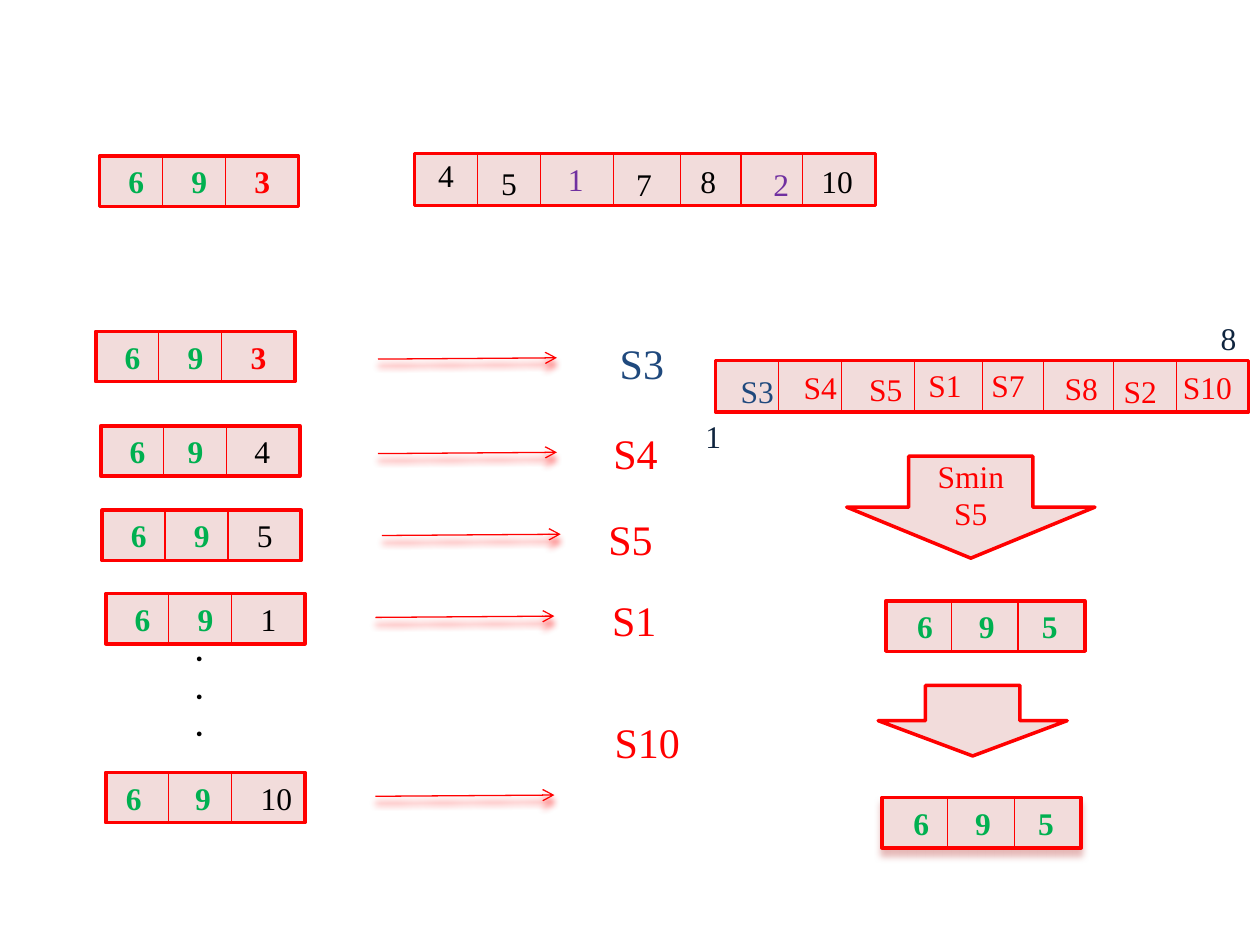
from dataclasses import dataclass
from lxml.etree import SubElement
from pptx import Presentation
from pptx.dml.color import RGBColor as Color
from pptx.enum.shapes import MSO_CONNECTOR as Connector, MSO_SHAPE as Preset
from pptx.enum.text import MSO_ANCHOR as Anchor, MSO_AUTO_SIZE as AutoSize, PP_ALIGN as Align
from pptx.oxml.ns import qn
from pptx.util import Inches, Pt


@dataclass(frozen=True)
class Theme:
    font: str = "Times New Roman"
    dot_font: str = "Calibri"
    red: str = "FF0000"
    pink: str = "F2DCDB"
    rose: str = "E6B9B8"
    green: str = "00B050"
    purple: str = "7030A0"
    blue: str = "1F497D"
    navy: str = "0F243E"
    black: str = "000000"
    text: int = 18
    score: int = 24
    border: float = 2
    rule: float = 0.75


THEME = Theme()
CELL = Inches(10) // 100
DIGIT_WIDTH, LETTER_WIDTH = 0.5, 0.56
TRIPLE_SIZE = (15.8, 4)
TRIPLE_RULES = (5, 10)
RESULT_RULES = (5.2, 10.5)
TRIPLE_LABELS = (1.3, 6.3, 11.3)
RESULT_LABELS = (1.5, 6.4, 11.4)


def grid(*cells):
    return [round(cell * CELL) for cell in cells]


def apply_format(target, values):
    for name, value in values.items():
        setattr(target, name, value)


def set_shadow(shape, color=None):
    effects = SubElement(shape.element.spPr, qn("a:effectLst"))
    if color:
        shadow = SubElement(effects, qn("a:outerShdw"), blurRad=str(Pt(4)), dist=str(Pt(4)),
                            dir="5400000", rotWithShape="0")
        SubElement(shadow, qn("a:srgbClr"), val=color)


def set_line(shape, width):
    shape.line.color.rgb = Color.from_string(THEME.red)
    shape.line.width = Pt(width)


def write(frame, lines, color, size=THEME.text, bold=False, font=THEME.font, align=Align.LEFT):
    for index, line in enumerate(lines):
        paragraph = frame.paragraphs[0] if index == 0 else frame.add_paragraph()
        paragraph.alignment = align
        run = paragraph.add_run()
        run.text = line
        apply_format(run.font, {"name": font, "size": Pt(size), "bold": bold})
        run.font.color.rgb = Color.from_string(color)


def add_label(slide, left, top, lines, color, size=THEME.text, **style):
    ems = max(sum(DIGIT_WIDTH if mark.isdigit() else LETTER_WIDTH for mark in line) for line in lines)
    width = 2 + ems * size / 7.2
    height = 1 + len(lines) * size / 6
    frame = slide.shapes.add_textbox(*grid(left, top, width, height)).text_frame
    apply_format(frame, {"word_wrap": False, "auto_size": AutoSize.SHAPE_TO_FIT_TEXT})
    write(frame, lines, color, size, **style)


def add_block(slide, preset, box, shadow=None):
    shape = slide.shapes.add_shape(preset, *grid(*box))
    shape.fill.solid()
    shape.fill.fore_color.rgb = Color.from_string(THEME.pink)
    set_line(shape, THEME.border)
    set_shadow(shape, shadow)
    return shape


def add_rule(slide, start, end, shadow=None, arrow=False):
    connector = slide.shapes.add_connector(Connector.STRAIGHT, *grid(*start, *end))
    set_line(connector, THEME.rule)
    if arrow:
        SubElement(connector.line._get_or_add_ln(), qn("a:tailEnd"), type="arrow")
    set_shadow(connector, shadow)


def add_strip(slide, box, rules, labels, shadow=None):
    left, top, _, height = box
    add_block(slide, Preset.RECTANGLE, box, shadow)
    for rule in rules:
        add_rule(slide, (left + rule, top - 0.1), (left + rule, top + height + 0.1))
    for text, color, bold, across, down in labels:
        add_label(slide, left + across, top + down, [text], color, bold=bold)


def add_triple(slide, left, top, last, last_color, rules=TRIPLE_RULES, places=TRIPLE_LABELS, shadow=None):
    colors = (THEME.green, THEME.green, last_color)
    labels = [(text, color, color != THEME.black, across, 0)
              for text, color, across in zip(("6", "9", last), colors, places)]
    add_strip(slide, (left, top, *TRIPLE_SIZE), rules, labels, shadow)


def add_candidates(slide, left, top):
    numbers = (("4", 0.9, -0.3), ("5", 5.9, 0.3), ("1", 11.2, 0), ("7", 16.6, 0.4),
               ("8", 21.7, 0.2), ("2", 27.5, 0.4), ("10", 31.3, 0.2))
    labels = [(text, THEME.purple if text in ("1", "2") else THEME.black, False, across, down)
              for text, across, down in numbers]
    add_strip(slide, (left, top, 36.6, 4.1), (5, 10, 15.8, 21.1, 25.9, 30.8), labels)


def add_scores(slide, left, top):
    scores = (("S3", 1, 0.4), ("S4", 6, 0.1), ("S5", 11.2, 0.3), ("S1", 15.9, 0),
              ("S7", 20.9, 0), ("S8", 26.7, 0.2), ("S2", 31.4, 0.4), ("S10", 36.1, 0.1))
    labels = [(text, THEME.blue if text == "S3" else THEME.red, False, across, down)
              for text, across, down in scores]
    add_strip(slide, (left, top, 42.3, 4.1), (5, 10, 15.8, 21.2, 26, 31.6, 36.6), labels)
    add_label(slide, left - 1.8, top + 4, ["1"], THEME.navy)
    add_label(slide, left + 39.1, top - 3.8, ["8"], THEME.navy)


def add_trial(slide, left, top, last, places, arrow_left, arrow_top, score_left, score_top):
    first = last == "3"
    add_triple(slide, left, top, last, THEME.red if first else THEME.black, places=places)
    add_rule(slide, (arrow_left, arrow_top), (arrow_left + 14.2, arrow_top - 0.1), THEME.red, True)
    add_label(slide, score_left, score_top, ["S" + last], THEME.blue if first else THEME.red, THEME.score)


def add_trials(slide):
    trials = (
        (7.6, 26.3, "3", TRIPLE_LABELS, 30, 28.5, 48.2, 26.3),
        (8, 33.8, "4", (1.3, 5.9, 11.2), 30, 36, 47.7, 33.4),
        (8.1, 40.5, "5", TRIPLE_LABELS, 30.3, 42.5, 47.3, 40.3),
        (8.4, 47.1, "1", TRIPLE_LABELS, 29.8, 49, 47.6, 46.7),
        (8.4, 61.3, "10", (0.6, 6.1, 11.3), 29.8, 63.2, 47.8, 56.4),
    )
    for trial in trials:
        add_trial(slide, *trial)
    add_label(slide, 14.5, 49.5, [".", ".", "."], THEME.black, bold=True, font=THEME.dot_font)


def add_selection(slide, left, top):
    arrow = add_block(slide, Preset.DOWN_ARROW, (left, top, 19.7, 8.1))
    arrow.text_frame.vertical_anchor = Anchor.MIDDLE
    write(arrow.text_frame, ["Smin", "S5"], THEME.red, align=Align.CENTER)
    add_triple(slide, left + 3.1, top + 11.5, "5", THEME.green, RESULT_RULES, RESULT_LABELS)
    add_block(slide, Preset.DOWN_ARROW, (left + 2.5, top + 18.2, 15, 5.6))
    add_triple(slide, left + 2.8, top + 27.1, "5", THEME.green, RESULT_RULES, RESULT_LABELS, THEME.rose)


def main():
    presentation = Presentation()
    apply_format(presentation, {"slide_width": Inches(10), "slide_height": Inches(7.5)})
    slide = presentation.slides.add_slide(presentation.slide_layouts[6])
    add_triple(slide, 7.9, 12.4, "3", THEME.red)
    add_candidates(slide, 32.9, 12.2)
    add_trials(slide)
    add_scores(slide, 56.8, 28.6)
    add_selection(slide, 67.2, 36.2)
    presentation.save("out.pptx")


if __name__ == "__main__":
    main()
